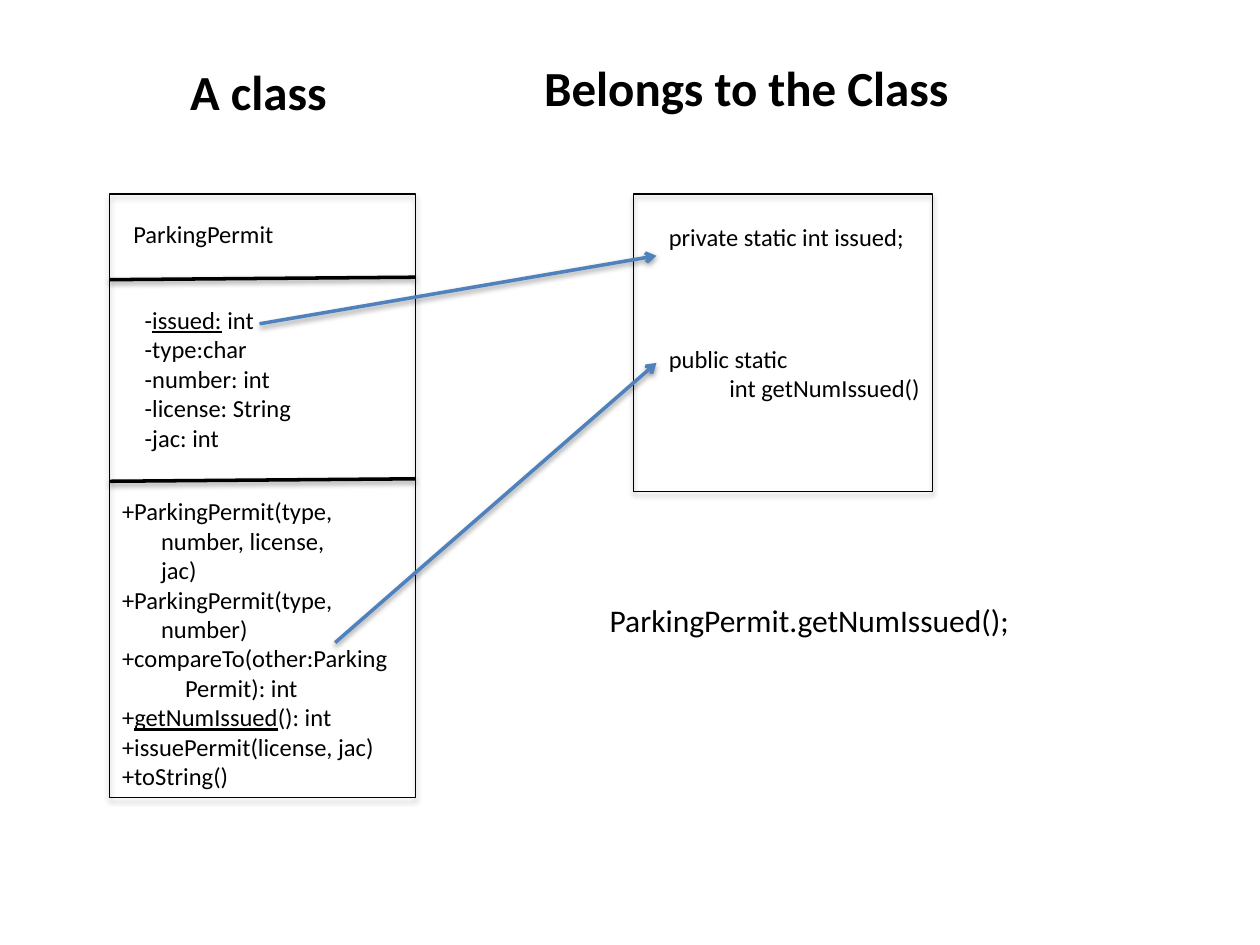
import pptx
import pptx.util
import pptx.dml.color
import pptx.enum.shapes
import pptx.enum.text
from dataclasses import dataclass
from lxml import etree
from pptx.oxml.ns import qn

Inches = pptx.util.Inches
Pt = pptx.util.Pt
RGB = pptx.dml.color.RGBColor


@dataclass(frozen=True)
class Theme:
    font: str = "Calibri"
    ink: RGB = RGB(0, 0, 0)
    accent: RGB = RGB(0x4F, 0x81, 0xBD)
    head: int = 28
    call: int = 18
    body: int = 14
    thin: float = 0.75
    thick: float = 2


THEME = Theme()
FIELDS = ["-|issued:| int", "-type:char", "-number: int",
          "-license: String", "-jac: int"]
METHODS = ["+ParkingPermit(type,", ("number, license,", 0.31), ("jac)", 0.31),
           "+ParkingPermit(type,", ("number)", 0.31),
           "+compareTo(other:Parking", ("Permit): int", 0.5),
           "+|getNumIssued|(): int", "+issuePermit(license, jac)",
           "+toString()"]
GETTER = ["public static", ("int getNumIssued()", 0.48)]


def add_shade(shape, alpha, drop):
    """Give the shape a soft shadow that falls straight down."""
    props = shape._element.spPr
    for old in props.findall(qn("a:effectLst")):
        props.remove(old)
    group = etree.SubElement(props, qn("a:effectLst"))
    shade = etree.SubElement(
        group, qn("a:outerShdw"), blurRad=str(Pt(3.1)), dist=str(Pt(drop)),
        dir="5400000", rotWithShape="0")
    color = etree.SubElement(shade, qn("a:srgbClr"), val=str(THEME.ink))
    etree.SubElement(color, qn("a:alpha"), val=str(alpha * 1000))


def add_box(slide, left, top, width, height):
    kind = pptx.enum.shapes.MSO_SHAPE.RECTANGLE
    box = slide.shapes.add_shape(
        kind, Inches(left), Inches(top), Inches(width), Inches(height))
    box.fill.background()
    box.line.color.rgb = THEME.ink
    box.line.width = Pt(THEME.thin)
    add_shade(box, 35, 1.8)


def add_line(slide, start, end, color, arrow=False):
    kind = pptx.enum.shapes.MSO_CONNECTOR.STRAIGHT
    line = slide.shapes.add_connector(kind, *map(Inches, start + end))
    line.line.color.rgb = color
    line.line.width = Pt(THEME.thick)
    if arrow:
        etree.SubElement(line.line._get_or_add_ln(), qn("a:tailEnd"),
                         type="arrow")
    add_shade(line, 38, 1.6)


def fill_text(frame, rows, size, bold=False):
    """Write rows; a pair is (text, indent), and bars enclose underlines."""
    frame.word_wrap = True
    frame.vertical_anchor = pptx.enum.text.MSO_ANCHOR.TOP
    for i, row in enumerate(rows):
        text, indent = row if isinstance(row, tuple) else (row, 0)
        para = frame.add_paragraph() if i else frame.paragraphs[0]
        para.alignment = pptx.enum.text.PP_ALIGN.LEFT
        if indent:
            para._p.get_or_add_pPr().set("marL", str(Inches(indent)))
        for j, part in enumerate(text.split("|")):
            run = para.add_run()
            run.text = part
            font = run.font
            font.name, font.size, font.bold = THEME.font, Pt(size), bold
            font.color.rgb = THEME.ink
            if j % 2:
                font.underline = True


def add_text(slide, at, rows, size=THEME.body, bold=False):
    box = slide.shapes.add_textbox(*map(Inches, at))
    fill_text(box.text_frame, rows, size, bold)


def set_title(slide, at, text):
    title = slide.shapes.title
    title.left, title.top, title.width, title.height = map(Inches, at)
    fill_text(title.text_frame, [text], THEME.head, True)


def main():
    deck = pptx.Presentation()
    deck.slide_width, deck.slide_height = Inches(10), Inches(7.5)
    slide = deck.slides.add_slide(deck.slide_layouts[5])

    set_title(slide, (1.41, 0.44, 1.39, 0.57), "A class")
    add_text(slide, (4.22, 0.41, 3.45, 0.57), ["Belongs to the Class"],
             THEME.head, True)

    left, width = 0.87, 2.43
    add_box(slide, left, 1.54, width, 4.79)
    for y in (2.22, 3.82):
        add_line(slide, (left, y), (left + width, y - 0.02), THEME.ink)
    add_text(slide, (0.96, 1.69, 2.12, 0.34), ["ParkingPermit"])
    add_text(slide, (1.05, 2.37, 2.12, 1.28), FIELDS)
    add_text(slide, (left, 3.89, 2.35, 2.93), METHODS)

    add_box(slide, 5.03, 1.54, 2.37, 2.36)
    static = 5.21
    add_text(slide, (static, 1.71, 2.1, 0.34), ["private static int issued;"])
    add_text(slide, (static, 2.68, 2.22, 0.57), GETTER)
    for start, y in (((2.06, 2.57), 2.03), ((2.66, 5.1), 2.88)):
        add_line(slide, start, (static, y), THEME.accent, arrow=True)

    add_text(slide, (4.74, 4.72, 3.42, 0.4),
             ["ParkingPermit.getNumIssued();"], THEME.call)
    deck.save("out.pptx")


if __name__ == "__main__":
    main()
